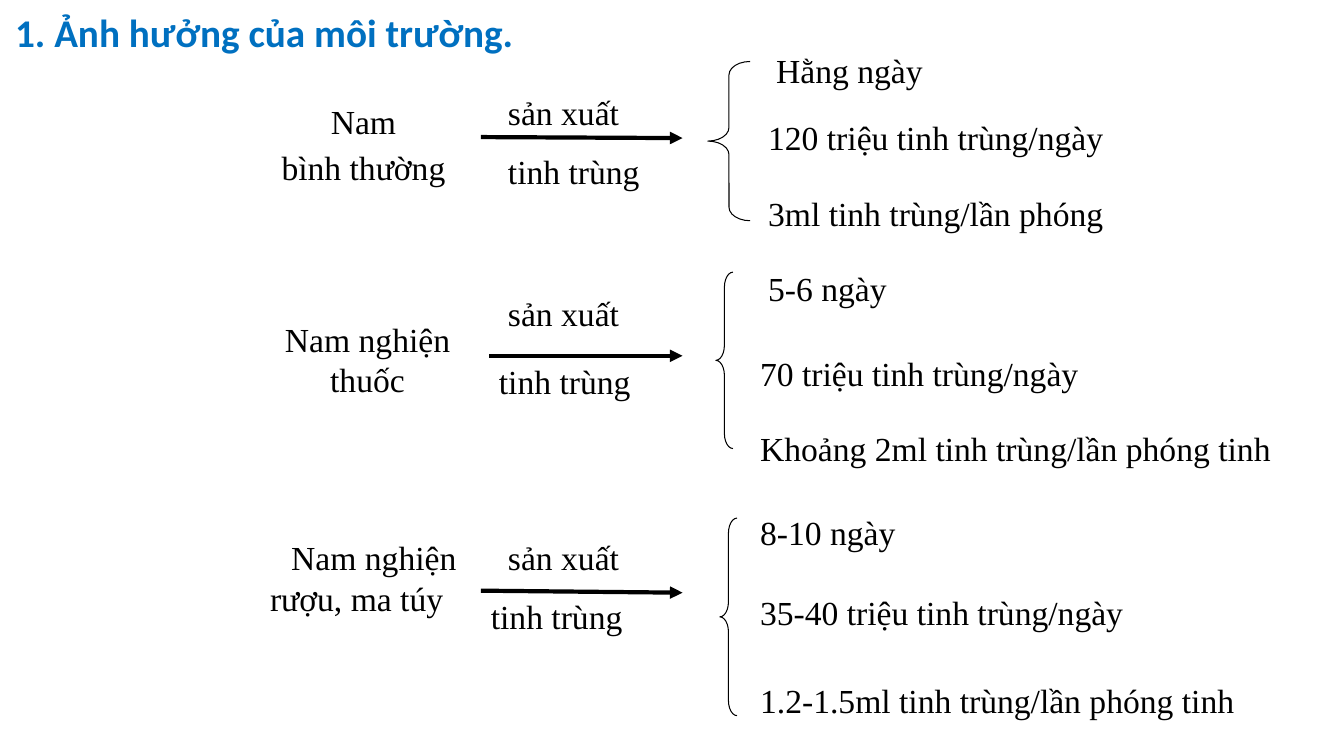
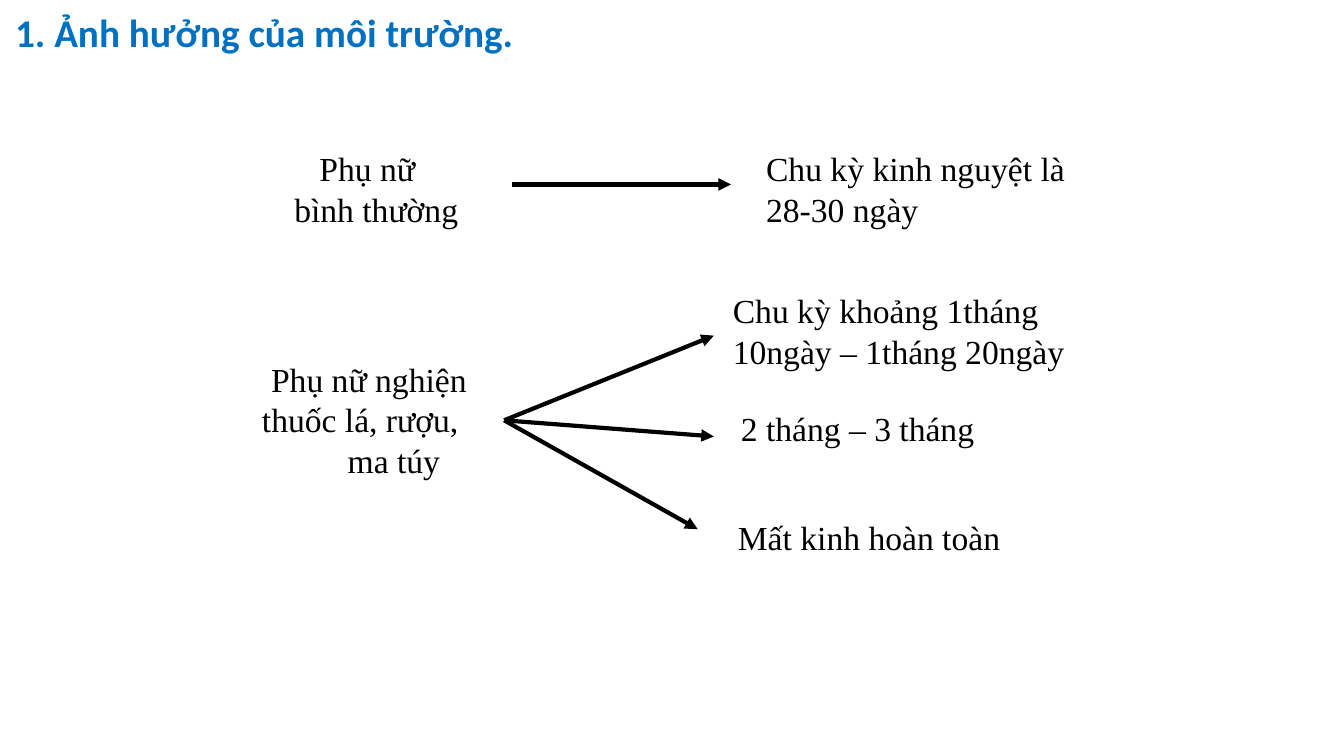
from dataclasses import dataclass

from lxml import etree
from pptx import Presentation
from pptx.dml.color import RGBColor
from pptx.enum.shapes import MSO_CONNECTOR as LINE, MSO_SHAPE as SHAPE
from pptx.enum.text import MSO_ANCHOR as ANCHOR, MSO_AUTO_SIZE as FIT, PP_ALIGN as ALIGN
from pptx.oxml.ns import qn
from pptx.util import Inches, Pt


@dataclass(frozen=True)
class Theme:
    ink: RGBColor = RGBColor(0, 0, 0)
    accent: RGBColor = RGBColor(0x00, 0x70, 0xC0)
    body_font: str = "Times New Roman"
    title_font: str = "Calibri"
    body_size: Pt = Pt(24)
    title_size: Pt = Pt(28)
    arrow_width: Pt = Pt(3)
    brace_width: Pt = Pt(0.75)


THEME = Theme()
BODY = dict(name=THEME.body_font, size=THEME.body_size)
HEADING = dict(name=THEME.title_font, size=THEME.title_size, bold=True)
CENTER = dict(alignment=ALIGN.CENTER)
SPACED = dict(alignment=ALIGN.CENTER, line_spacing=0.8, space_before=Pt(10))

TITLE = "1. Ảnh hưởng của môi trường."
VERBS = ("sản xuất", "tinh trùng")
VERB_WIDTH, RESULT_WIDTH, LINE_HEIGHT = 2.1, 5.6, 0.5

MEN = [
    dict(
        label=((2.27, 1.03, 2.67, 0.67), [("Nam", 0, 0), ("bình thường", 0, 0)], SPACED),
        arrow=(4.77, 1.36, 6.77, 1.37),
        verbs=[(4.94, 0.86), (4.94, 1.45)],
        brace=((7.02, 0.61, 0.42, 1.58), 0.32),
        results=[
            (7.6, 0.45, "Hằng ngày"),
            (7.52, 1.11, "120 triệu tinh trùng/ngày"),
            (7.52, 1.86, "3ml tinh trùng/lần phóng"),
        ],
    ),
    dict(
        label=((2.52, 3.11, 2.25, 0.91), [("Nam nghiện thuốc", 0, 0)], CENTER),
        arrow=(4.85, 3.53, 6.77, 3.53),
        verbs=[(4.94, 2.86), (4.85, 3.53)],
        brace=((7.1, 2.7, 0.17, 1.75), 0.88),
        results=[
            (7.52, 2.61, "5-6 ngày"),
            (7.44, 3.45, "70 triệu tinh trùng/ngày"),
            (7.44, 4.2, "Khoảng 2ml tinh trùng/lần phóng tinh"),
        ],
    ),
    dict(
        label=((2.58, 5.28, 2.25, 0.91), [("Nam nghiện rượu, ma túy", 0, 0.21)], {}),
        arrow=(4.77, 5.86, 6.77, 5.88),
        verbs=[(4.94, 5.28), (4.77, 5.86)],
        brace=((7.14, 5.14, 0.17, 1.96), 0.88),
        results=[
            (7.44, 5.03, "8-10 ngày"),
            (7.44, 5.82, "35-40 triệu tinh trùng/ngày"),
            (7.44, 6.7, "1.2-1.5ml tinh trùng/lần phóng tinh"),
        ],
    ),
]

WOMEN_TEXTS = [
    ((2.82, 1.42, 2.01, 0.91), [("Phụ nữ bình thường", 0, 0.25)]),
    ((7.5, 1.42, 3.17, 0.91), [("Chu kỳ kinh nguyệt là 28-30 ngày", 0, 0)]),
    ((2.5, 3.51, 2.33, 1.31),
     [("Phụ nữ nghiện thuốc lá, rượu,", 0, 0.09), ("ma túy", 0.85, 0)]),
    ((7.17, 2.83, 3.8, 0.91), [("Chu kỳ khoảng 1tháng 10ngày – 1tháng 20ngày", 0, 0)]),
    ((7.25, 4, 3.33, 0.5), [("2 tháng – 3 tháng", 0, 0)]),
    ((7.22, 5.08, 3.08, 0.5), [("Mất kinh hoàn toàn", 0, 0)]),
]
FAN_START = (5, 4.17)
FAN_ENDS = [(7.08, 3.33), (7.08, 4.33), (6.92, 5.25)]
WOMEN_ARROWS = [(5.08, 1.83, 7.25, 1.83)] + [FAN_START + end for end in FAN_ENDS]


def inches(values):
    return [Inches(v) for v in values]


def apply(target, formats):
    for name, value in formats.items():
        setattr(target, name, value)


def add_slide(prs):
    s = prs.slides.add_slide(prs.slide_layouts[5])
    title = s.shapes.title
    apply(title, dict(zip(("left", "top", "width", "height"), inches((0.05, 0.08, 7.9, 0.53)))))
    tf = title.text_frame
    apply(tf, dict(text=TITLE, auto_size=FIT.NONE, vertical_anchor=ANCHOR.MIDDLE))
    p = tf.paragraphs[0]
    apply(p, dict(alignment=ALIGN.LEFT, line_spacing=0.9))
    font = p.runs[0].font
    apply(font, HEADING)
    font.color.rgb = THEME.accent
    return s


def add_text(s, box, paragraphs, formats):
    tf = s.shapes.add_textbox(*inches(box)).text_frame
    tf.word_wrap = True
    for i, (text, margin, indent) in enumerate(paragraphs):
        p = tf.add_paragraph() if i else tf.paragraphs[0]
        apply(p, formats)
        if margin or indent:
            pPr = p._p.get_or_add_pPr()
            pPr.set("marL", str(Inches(margin)))
            pPr.set("indent", str(Inches(indent)))
        r = p.add_run()
        r.text = text
        apply(r.font, BODY)
        r.font.color.rgb = THEME.ink


def add_arrow(s, ends):
    arrow = s.shapes.add_connector(LINE.STRAIGHT, *inches(ends))
    arrow.line.width = THEME.arrow_width
    arrow.line.color.rgb = THEME.ink
    etree.SubElement(arrow.line._get_or_add_ln(), qn("a:tailEnd"), type="triangle")
    etree.SubElement(arrow._element.spPr, qn("a:effectLst"))


def add_brace(s, box, curl):
    brace = s.shapes.add_shape(SHAPE.LEFT_BRACE, *inches(box))
    brace.shadow.inherit = False
    brace.adjustments[0] = curl
    brace.fill.background()
    brace.line.width = THEME.brace_width
    brace.line.color.rgb = THEME.ink


def build_men(prs):
    s = add_slide(prs)
    for row in MEN:
        add_text(s, *row["label"])
        add_arrow(s, row["arrow"])
        add_brace(s, *row["brace"])
        for (x, y), verb in zip(row["verbs"], VERBS):
            add_text(s, (x, y, VERB_WIDTH, LINE_HEIGHT), [(verb, 0, 0)], {})
        for x, y, result in row["results"]:
            add_text(s, (x, y, RESULT_WIDTH, LINE_HEIGHT), [(result, 0, 0)], {})


def build_women(prs):
    s = add_slide(prs)
    for box, paragraphs in WOMEN_TEXTS:
        add_text(s, box, paragraphs, {})
    for ends in WOMEN_ARROWS:
        add_arrow(s, ends)


def main():
    prs = Presentation()
    prs.slide_width, prs.slide_height = inches((13.33, 7.5))
    build_men(prs)
    build_women(prs)
    prs.save("out.pptx")


if __name__ == "__main__":
    main()
